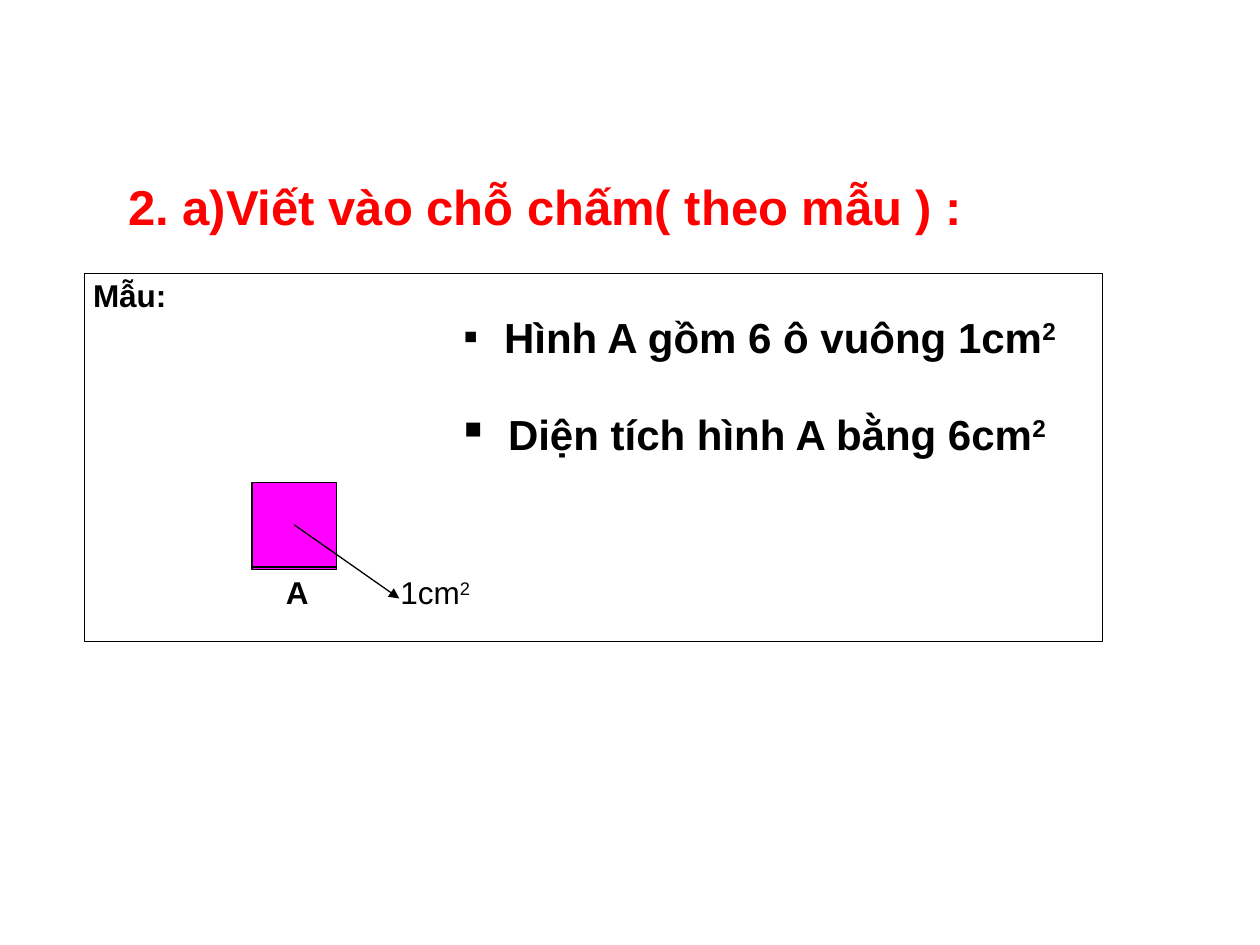
import pptx
import pptx.util
import pptx.dml.color
import pptx.enum.shapes
import pptx.oxml.ns
import lxml.etree

Inches = pptx.util.Inches
Pt = pptx.util.Pt
BLACK, RED, MAGENTA = "000000", "FF0000", "FF00FF"
CELL = 0.67


def color(value):
    return pptx.dml.color.RGBColor.from_string(value)


def add_xml(parent, tag, **attrs):
    return lxml.etree.SubElement(parent, pptx.oxml.ns.qn(tag), attrs)


def add_text(s, box, runs, hue=BLACK, bold=True, bullet=None):
    """Place one line of text; runs are (text, size, superscript)."""
    sp = s.shapes.add_textbox(*map(Inches, box))
    tf = sp.text_frame
    tf.word_wrap = True
    p = tf.paragraphs[0]
    if bullet:
        pPr = p._p.get_or_add_pPr()
        pPr.set("marL", str(Inches(0.23)))
        pPr.set("indent", str(-Inches(0.23)))
        add_xml(pPr, "a:buFont", typeface="Arial")
        add_xml(pPr, "a:buChar", char=bullet)
    for text, size, raised in runs:
        r = p.add_run()
        r.text = text
        fmt = {"name": "Arial", "size": Pt(size), "bold": bold}
        for key, value in fmt.items():
            setattr(r.font, key, value)
        r.font.color.rgb = color(hue)
        if raised:
            r.font._element.set("baseline", "30000")


def add_rect(s, box, fill=None):
    sp = s.shapes.add_shape(pptx.enum.shapes.MSO_SHAPE.RECTANGLE, *map(Inches, box))
    sp.shadow.inherit = False
    if fill:
        sp.fill.solid()
        sp.fill.fore_color.rgb = color(fill)
    else:
        sp.fill.background()
    sp.line.color.rgb = color(BLACK)
    sp.line.width = Pt(0.75)


def add_arrow(s, x1, y1, x2, y2):
    line = s.shapes.add_connector(
        pptx.enum.shapes.MSO_CONNECTOR.STRAIGHT, *map(Inches, (x1, y1, x2, y2)))
    line.line.color.rgb = color(BLACK)
    line.line.width = Pt(0.75)
    add_xml(line.line._get_or_add_ln(), "a:tailEnd", type="triangle")
    add_xml(line._element.spPr, "a:effectLst")


def add_figure(s, x, y):
    """Unit square with its name and an arrow to its area."""
    for top in (y + 0.02, y):
        add_rect(s, (x, top, CELL, CELL), MAGENTA)
    add_text(s, (x + 1.08, y + CELL, 1.08, 0.4),
             [("1cm", 18, False), ("2", 18, True)], bold=False)
    add_arrow(s, x + CELL / 2, y + CELL / 2, x + 1.17, y + 0.92)
    add_text(s, (x + 0.17, y + CELL, 0.83, 0.4), [("A", 18, False)])


def add_sample(s, x, y, w, h):
    """Framed worked example."""
    add_figure(s, x + 1.33, y + 1.66)
    add_rect(s, (x, y, w, h))
    add_text(s, (x - 0.03, y - 0.03, 0.83, 0.4), [("Mẫu:", 18, False)])
    facts = [
        (0.25, 0.51, [(" Hình A gồm 6 ô vuông 1cm", 24, False)]),
        (0.91, 0.64, [(" ", 32, False), ("Diện tích hình A bằng 6cm", 24, False)]),
    ]
    for dy, height, runs in facts:
        add_text(s, (x + 2.91, y + dy, 5.08, height),
                 runs + [("2", 24, True)], bullet="▪")


def main():
    prs = pptx.Presentation()
    prs.slide_width, prs.slide_height = Inches(10), Inches(7.5)
    s = prs.slides.add_slide(prs.slide_layouts[6])
    # Heading
    add_text(s, (0.92, 1.35, 7.75, 0.57),
             [("2. a)Viết vào chỗ chấm( theo mẫu ) :", 28, False)], hue=RED)
    # Worked example
    add_sample(s, 0.67, 2.17, 8.08, 2.92)
    prs.save("out.pptx")


if __name__ == "__main__":
    main()
